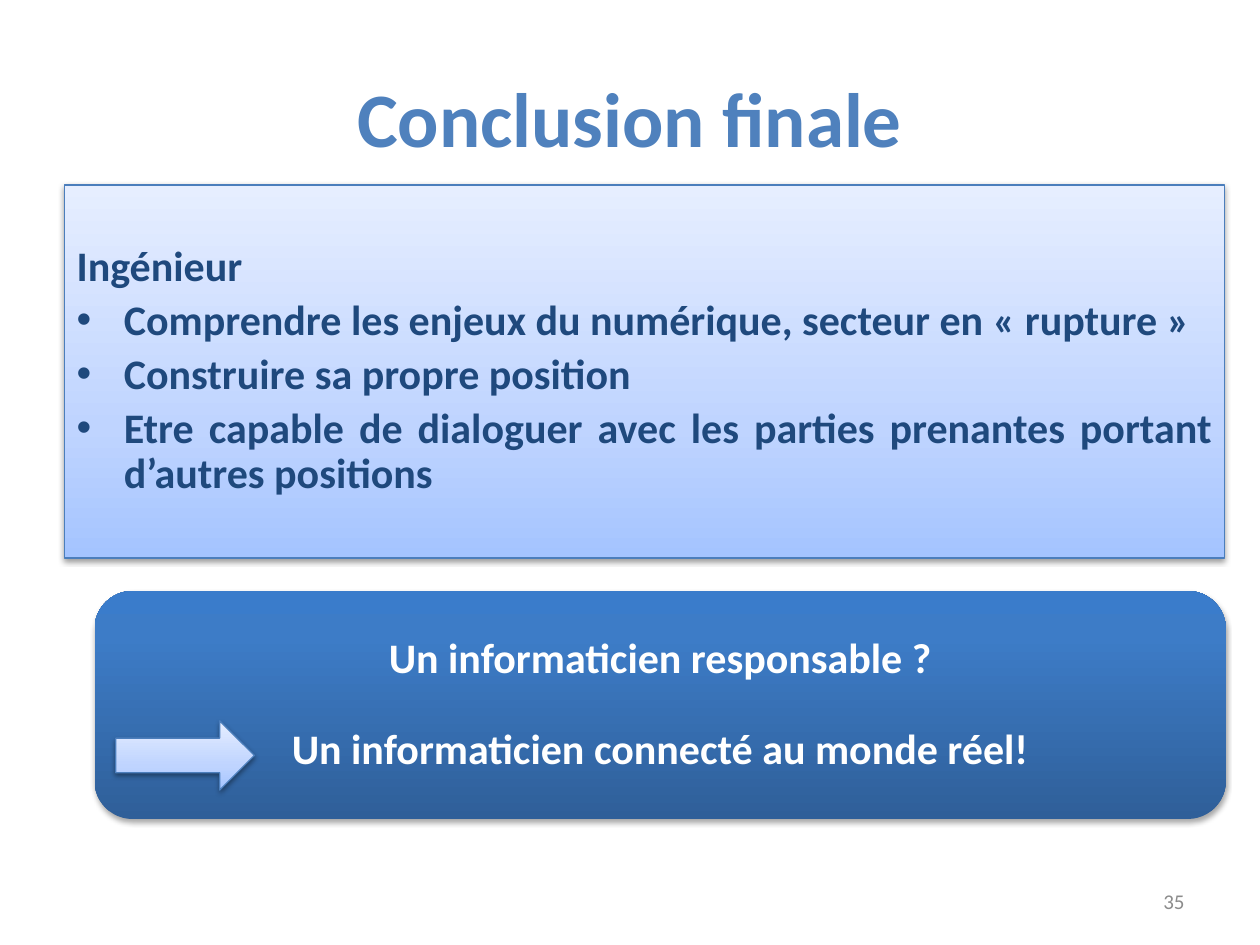
from copy import deepcopy

from lxml.etree import SubElement
from pptx import Presentation
from pptx.dml.color import RGBColor
from pptx.enum.shapes import MSO_SHAPE
from pptx.enum.text import MSO_ANCHOR, PP_ALIGN
from pptx.oxml.ns import qn
from pptx.util import Pt

COLORS = {
    "title": "4F81BD",
    "body": "1F497D",
    "white": "FFFFFF",
    "number": "8C8C8C",
    "outline": "4B7EBC",
    "shadow": "000000",
}
LIGHT_GRADIENT = [(0, "A4C4FF"), (0.35, "BFD4FF"), (1, "E6EEFF")]
DARK_GRADIENT = [(0, "2F5F99"), (0.8, "3D7CC7"), (1, "3A7CCB")]
HANGING_INDENT = 27


def color(name):
    """Return the named colour."""
    return RGBColor.from_string(COLORS[name])


def write_text(shape, lines, size, color_name, bold=True, align=PP_ALIGN.CENTER,
               line_spacing=1, gap=0, first_gap=0):
    """Write one paragraph per line, centred vertically, and return the paragraphs."""
    frame = shape.text_frame
    frame.word_wrap = True
    frame.vertical_anchor = MSO_ANCHOR.MIDDLE
    frame.text = "\n".join(lines)
    for index, paragraph in enumerate(frame.paragraphs):
        paragraph.alignment = align
        paragraph.line_spacing = line_spacing
        paragraph.space_before = Pt(gap if index else first_gap)
        font = paragraph.runs[0].font
        font.name, font.size, font.bold = "Calibri", Pt(size), bold
        font.color.rgb = color(color_name)
    return frame.paragraphs


def add_text_box(slide, box, lines, **text_format):
    """Add a text box in the given box."""
    shape = slide.shapes.add_textbox(*map(Pt, box))
    write_text(shape, lines, **text_format)


def indent_paragraph(paragraph, bullet=None):
    """Give a paragraph a hanging indent and, if asked, a bullet."""
    properties = paragraph._p.get_or_add_pPr()
    properties.set("marL", str(Pt(HANGING_INDENT)))
    properties.set("indent", str(-Pt(HANGING_INDENT)))
    if bullet:
        SubElement(properties, qn("a:buFont"), typeface="Arial")
        SubElement(properties, qn("a:buChar"), char=bullet)


def add_shadow(shape, opacity, distance):
    """Add a soft shadow that falls straight down."""
    shape.shadow.inherit = False
    effects = shape._element.spPr.find(qn("a:effectLst"))
    shadow = SubElement(effects, qn("a:outerShdw"), blurRad=str(Pt(3.1)),
                        dist=str(Pt(distance)), dir="5400000", rotWithShape="0")
    shade = SubElement(shadow, qn("a:srgbClr"), val=COLORS["shadow"])
    SubElement(shade, qn("a:alpha"), val=str(opacity * 1000))


def add_gradient_shape(slide, kind, box, gradient, outlined=True):
    """Add a shape with a vertical gradient and a shadow."""
    shape = slide.shapes.add_shape(kind, *map(Pt, box))
    shape.fill.gradient()
    shape.fill.gradient_angle = 90
    stop_list = shape._element.spPr.find(".//" + qn("a:gsLst"))
    stop_list.append(deepcopy(stop_list[-1]))
    for stop, (position, value) in zip(shape.fill.gradient_stops, gradient):
        stop.position = position
        stop.color.rgb = RGBColor.from_string(value)
    if outlined:
        shape.line.color.rgb = color("outline")
        shape.line.width = Pt(0.75)
        add_shadow(shape, opacity=38, distance=1.6)
    else:
        shape.line.fill.background()
        add_shadow(shape, opacity=35, distance=1.8)
    return shape


def add_engineer_panel(slide, box):
    """Add the light panel with its heading and bullets."""
    panel = add_gradient_shape(slide, MSO_SHAPE.RECTANGLE, box, LIGHT_GRADIENT)
    heading, *points = write_text(panel, [
        "Ingénieur",
        "Comprendre les enjeux du numérique, secteur en « rupture »",
        "Construire sa propre position",
        "Etre capable de dialoguer avec les parties prenantes portant d’autres positions",
    ], size=24, color_name="body", align=PP_ALIGN.JUSTIFY, line_spacing=0.9,
        gap=4.8, first_gap=4.8)
    indent_paragraph(heading)
    for point in points:
        indent_paragraph(point, "•")


def add_conclusion_banner(slide, box):
    """Add the dark rounded banner and the arrow inside it."""
    left, top, _, _ = box
    banner = add_gradient_shape(slide, MSO_SHAPE.ROUNDED_RECTANGLE, box,
                                DARK_GRADIENT, outlined=False)
    write_text(banner, [
        "Un informaticien responsable ?",
        "Un informaticien connecté au monde réel!",
    ], size=24, color_name="white", line_spacing=0.9, gap=26)
    add_gradient_shape(slide, MSO_SHAPE.RIGHT_ARROW,
                       (left + 12.2, top + 74.2, 79.2, 39.6), LIGHT_GRADIENT)


def main():
    """Build and save the slide."""
    presentation = Presentation()
    presentation.slide_width, presentation.slide_height = Pt(720), Pt(540)
    slide = presentation.slides.add_slide(presentation.slide_layouts[6])
    add_text_box(slide, (516, 500.5, 168, 28.8), ["35"], size=12,
                 color_name="number", bold=False, align=PP_ALIGN.RIGHT)
    add_text_box(slide, (36, 21.6, 648, 90), ["Conclusion finale"], size=44,
                 color_name="title")
    add_conclusion_banner(slide, (54, 337.7, 646.5, 130.3))
    add_engineer_panel(slide, (36.7, 105.8, 663.2, 213.1))
    presentation.save("out.pptx")


if __name__ == "__main__":
    main()
